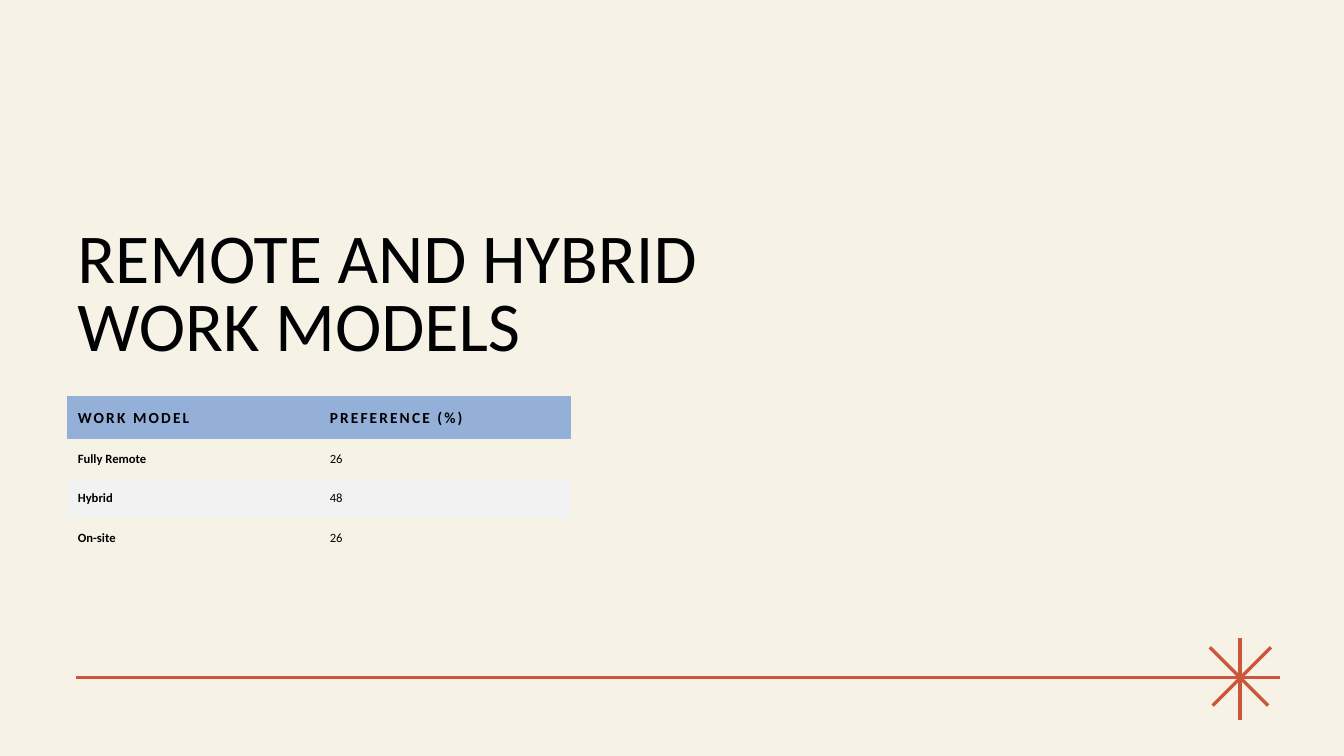
from dataclasses import dataclass

from lxml import etree
from pptx import Presentation
from pptx.dml.color import RGBColor
from pptx.enum.shapes import MSO_CONNECTOR
from pptx.enum.text import MSO_ANCHOR, PP_ALIGN
from pptx.oxml.ns import qn
from pptx.util import Pt

STRAIGHT = MSO_CONNECTOR.STRAIGHT
MIDDLE, BOTTOM = MSO_ANCHOR.MIDDLE, MSO_ANCHOR.BOTTOM
LEFT = PP_ALIGN.LEFT

FONT = "Calibri"
CREAM, RUST, BLUE, GREY = "F6F2E6", "CC563B", "95B0D8", "F2F2F2"
TITLE_INK, TABLE_INK = "000102", "000000"
NO_STYLE_NO_GRID = "{2D5ABB26-0587-4C30-8999-92F81FD0307C}"
CELL_MARGIN = Pt(7.6)


@dataclass
class Line:
    x1: float
    y1: float
    x2: float
    y2: float


@dataclass
class Row:
    texts: tuple[str, str]
    height: float = 28.3
    size: float = 9
    bold: tuple[bool, bool] = (True, False)
    tracking: float = 0
    fill: str | None = None


LINES = [
    Line(885.8, 455.9, 885.8, 514.6),
    Line(914.4, 483.9, 54, 483.9),
    Line(907.8, 462.4, 866.2, 504),
    Line(905.8, 504, 864.2, 462.4),
]

ROWS = [
    Row(("WORK MODEL", "PREFERENCE (%)"), 30.7, 11, (True, True), 1.5, BLUE),
    Row(("Fully Remote", "26")),
    Row(("Hybrid", "48"), fill=GREY),
    Row(("On-site", "26")),
]


def rgb(value: str) -> RGBColor:
    return RGBColor.from_string(value)


def add_run(p, text: str, size: float, color: str, bold: bool = False,
            tracking: float = 0) -> None:
    r = p.add_run()
    r.text = text
    r.font.name = FONT
    r.font.size = Pt(size)
    r.font.bold = bold
    r.font.color.rgb = rgb(color)
    if tracking:
        r.font._element.set("spc", str(int(tracking * 100)))


def add_line(s, line: Line) -> None:
    sp = s.shapes.add_connector(STRAIGHT, Pt(line.x1), Pt(line.y1),
                                Pt(line.x2), Pt(line.y2))
    sp.line.color.rgb = rgb(RUST)
    sp.line.width = Pt(2.5)
    etree.SubElement(sp._element.spPr, qn("a:effectLst"))


def set_title(s, text: str) -> None:
    sp = s.shapes.title
    sp.left, sp.top, sp.width, sp.height = Pt(48), Pt(144), Pt(504), Pt(120)
    tf = sp.text_frame
    tf.word_wrap = True
    tf.vertical_anchor = BOTTOM
    p = tf.paragraphs[0]
    p.alignment = LEFT
    p.line_spacing = 0.8
    add_run(p, text, 50, TITLE_INK)


def add_table(s, rows: list[Row]) -> None:
    frame = s.shapes.add_table(len(rows), 2, Pt(48), Pt(283), Pt(360),
                               Pt(sum(row.height for row in rows)))
    table = frame.table
    table.first_row = table.horz_banding = False
    table._tbl.tblPr.find(qn("a:tableStyleId")).text = NO_STYLE_NO_GRID
    for i, row in enumerate(rows):
        table.rows[i].height = Pt(row.height)
        for j, (text, bold) in enumerate(zip(row.texts, row.bold)):
            cell = table.cell(i, j)
            cell.vertical_anchor = MIDDLE
            cell.margin_left = cell.margin_right = CELL_MARGIN
            cell.margin_top = cell.margin_bottom = CELL_MARGIN
            if row.fill:
                cell.fill.solid()
                cell.fill.fore_color.rgb = rgb(row.fill)
            else:
                cell.fill.background()
            add_run(cell.text_frame.paragraphs[0], text, row.size,
                    TABLE_INK, bold, row.tracking)


def main() -> None:
    prs = Presentation()
    prs.slide_width, prs.slide_height = Pt(960), Pt(540)
    s = prs.slides.add_slide(prs.slide_layouts[5])
    s.background.fill.solid()
    s.background.fill.fore_color.rgb = rgb(CREAM)

    # Rule and star
    for line in LINES:
        add_line(s, line)

    # Title and preference table
    set_title(s, "REMOTE AND HYBRID WORK MODELS")
    add_table(s, ROWS)

    prs.save("out.pptx")


if __name__ == "__main__":
    main()
